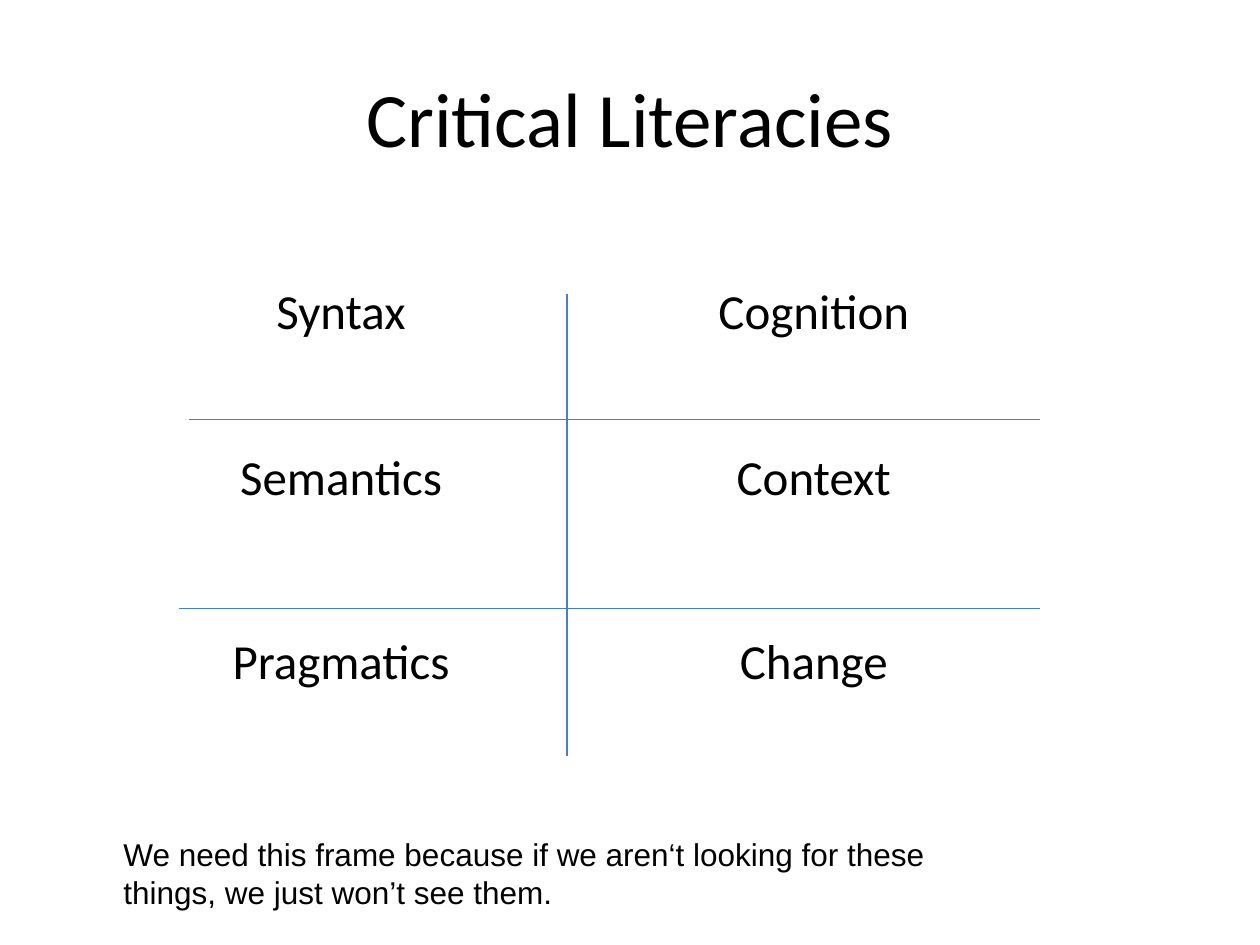
from dataclasses import dataclass

from lxml import etree
from pptx import Presentation
from pptx.dml.color import RGBColor
from pptx.enum.shapes import MSO_CONNECTOR
from pptx.enum.text import MSO_ANCHOR, PP_ALIGN
from pptx.oxml.ns import qn
from pptx.util import Cm, Pt

STRAIGHT = MSO_CONNECTOR.STRAIGHT
MIDDLE = MSO_ANCHOR.MIDDLE
CENTER, LEFT = PP_ALIGN.CENTER, PP_ALIGN.LEFT
TITLE_ONLY = 5


@dataclass(frozen=True)
class Theme:
    text: RGBColor = RGBColor(0, 0, 0)
    line: RGBColor = RGBColor(0x4B, 0x7E, 0xBC)
    border: str = "FFFFFF"
    main_font: str = "Calibri"
    note_font: str = "Arial"
    title_size: Pt = Pt(44)
    cell_size: Pt = Pt(28)
    note_size: Pt = Pt(18)
    line_width: Pt = Pt(0.75)
    border_width: Pt = Pt(1)


THEME = Theme()

LITERACIES = [
    ("Syntax", "Cognition"),
    ("Semantics", "Context"),
    ("Pragmatics", "Change"),
]
ROW_HEIGHTS = [3.02, 3.66, 3.76]
COLUMN_WIDTH = 9.53
FRAME_LINES = [
    (3.81, 8.46, 20.96, 8.46),
    (3.61, 12.27, 20.96, 12.27),
    (11.43, 5.92, 11.43, 15.24),
]
NOTE = ("We need this frame because if we aren‘t looking for these things, "
        "we just won’t see them.")


def write_text(text_frame, text, font_name, size, alignment):
    text_frame.text = text
    paragraph = text_frame.paragraphs[0]
    paragraph.alignment = alignment
    paragraph.font.name = font_name
    paragraph.font.size = size
    paragraph.font.color.rgb = THEME.text


def add_title(slide, text):
    title = slide.shapes.title
    title.left, title.top = Cm(1.27), Cm(0.76)
    title.width, title.height = Cm(22.86), Cm(3.18)
    title.text_frame.vertical_anchor = MIDDLE
    write_text(title.text_frame, text, THEME.main_font, THEME.title_size, CENTER)


def set_borders(cell):
    properties = cell._tc.get_or_add_tcPr()
    for position, side in enumerate(("a:lnL", "a:lnR", "a:lnT", "a:lnB")):
        border = etree.Element(qn(side), w=str(THEME.border_width))
        fill = etree.SubElement(border, qn("a:solidFill"))
        etree.SubElement(fill, qn("a:srgbClr"), val=THEME.border)
        properties.insert(position, border)


def add_literacy_table(slide):
    frame = slide.shapes.add_table(
        len(LITERACIES), 2, Cm(2.11), Cm(4.8),
        Cm(2 * COLUMN_WIDTH), Cm(sum(ROW_HEIGHTS)))
    table = frame.table
    table.first_row = table.horz_banding = False
    for column in table.columns:
        column.width = Cm(COLUMN_WIDTH)
    for row, height, texts in zip(table.rows, ROW_HEIGHTS, LITERACIES):
        row.height = Cm(height)
        for cell, text in zip(row.cells, texts):
            cell.fill.background()
            cell.vertical_anchor = MIDDLE
            set_borders(cell)
            write_text(cell.text_frame, text, THEME.main_font,
                       THEME.cell_size, CENTER)


def add_note(slide, text):
    box = slide.shapes.add_textbox(Cm(2.24), Cm(16.71), Cm(18.42), Cm(1.78))
    box.text_frame.word_wrap = True
    write_text(box.text_frame, text, THEME.note_font, THEME.note_size, LEFT)


def add_line(slide, ends):
    line = slide.shapes.add_connector(STRAIGHT, *map(Cm, ends))
    line.line.color.rgb = THEME.line
    line.line.width = THEME.line_width
    etree.SubElement(line._element.spPr, qn("a:effectLst"))


def main():
    presentation = Presentation()
    presentation.slide_width, presentation.slide_height = Cm(25.4), Cm(19.05)
    slide = presentation.slides.add_slide(presentation.slide_layouts[TITLE_ONLY])
    add_title(slide, "Critical Literacies")
    add_literacy_table(slide)
    add_note(slide, NOTE)
    for ends in FRAME_LINES:
        add_line(slide, ends)
    presentation.save("out.pptx")


if __name__ == "__main__":
    main()
